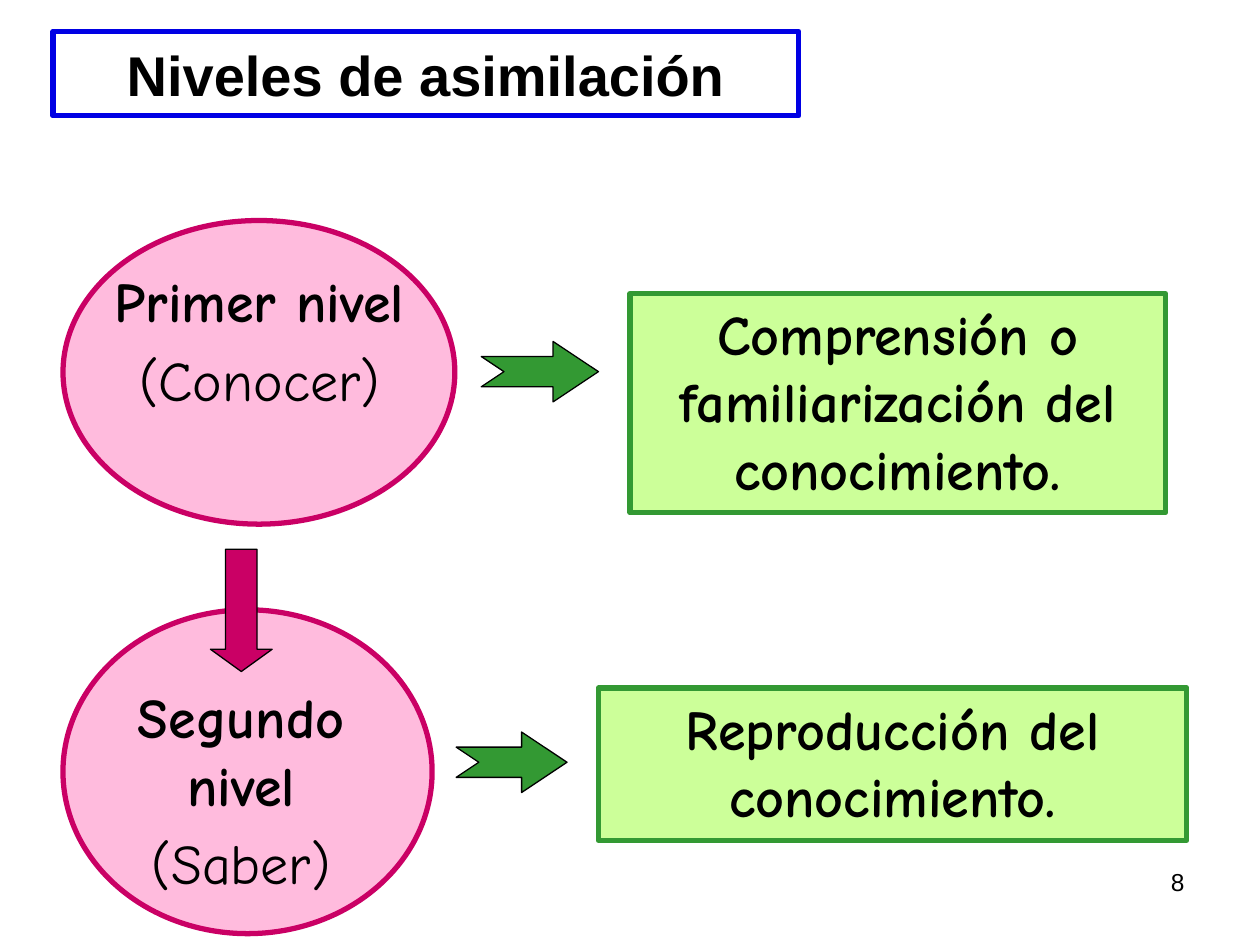
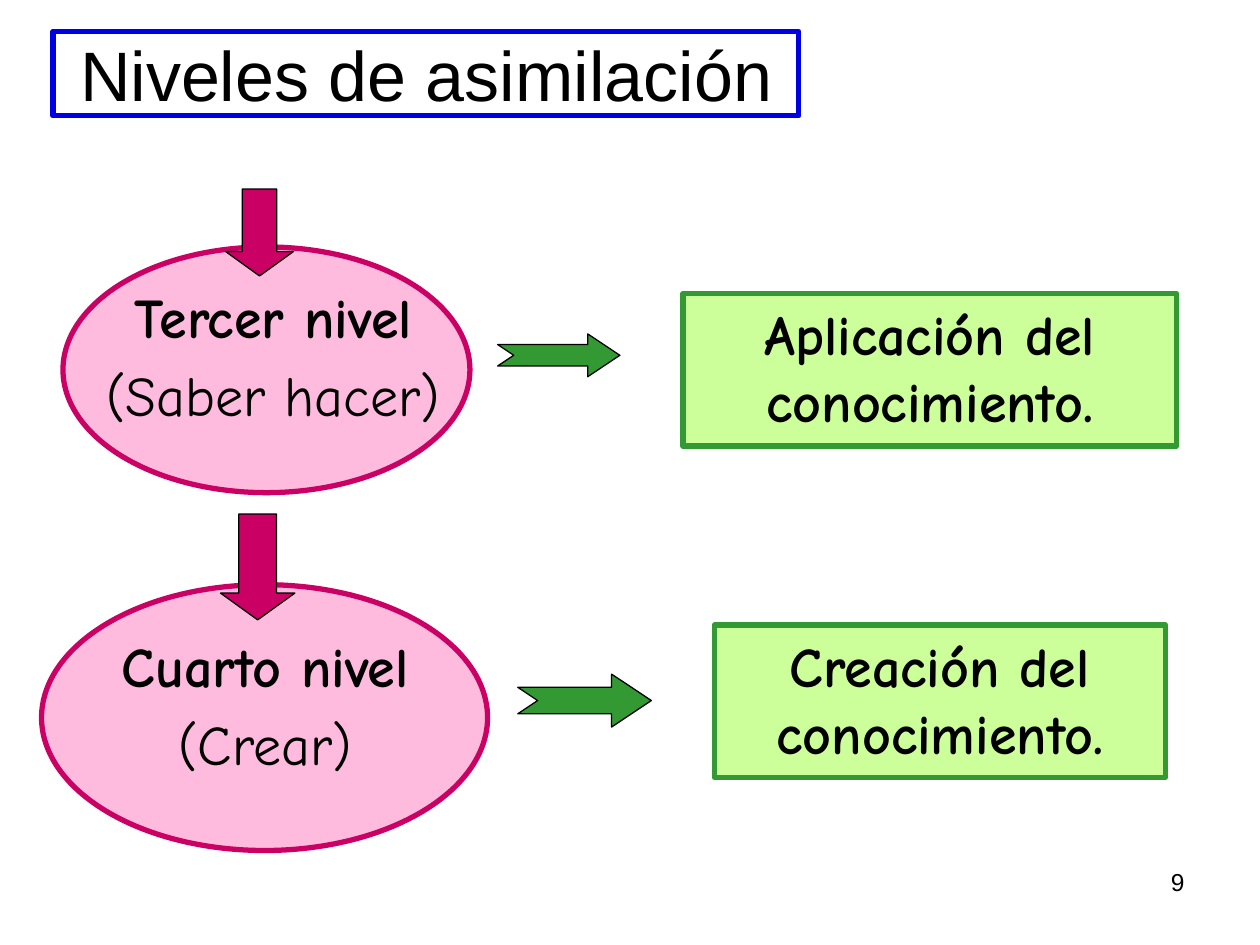
from pptx import Presentation
from pptx.dml.color import RGBColor
from pptx.enum import shapes, text
from pptx.util import Inches, Pt

COLORS = {
    "black": "000000", "white": "FFFFFF", "title_line": "0000E4",
    "pink": "FFBBDD", "magenta": "CA0065",
    "lime": "CCFF99", "green": "339933",
}
TITLE_FONT, BODY_FONT = "Arial", "Comic Neue"
TITLE_BOX = (0.42, 0.25, 5.92, 0.67)
NUMBER_BOX = (7.17, 6.83, 2.33, 0.52)
SHAPE = shapes.MSO_SHAPE
CENTER, RIGHT = text.PP_ALIGN.CENTER, text.PP_ALIGN.RIGHT

# Boxes are (left, top, width, height) in inches. Inside a level, the caption
# and arrow boxes are measured from the top left corner of its ellipse.
SLIDES = [
    {"number": 8, "title_size": 32, "title_bold": True,
     "levels": [
         {"ellipse": (0.5, 1.75, 3.11, 2.41), "name": "Primer nivel",
          "verb": "(Conocer)", "caption": (0.21, 0.32, 2.7, 1.8),
          "right": (3.32, 0.96, 0.93, 0.48), "down": None,
          "result": "Comprensión o familiarización del conocimiento.",
          "result_box": (5, 2.33, 4.25, 1.74)},
         {"ellipse": (0.5, 4.84, 2.93, 2.57), "name": "Segundo nivel",
          "verb": "(Saber)", "caption": (0, 0.53, 2.83, 1.8),
          "right": (3.12, 0.97, 0.88, 0.48), "down": (1.17, -0.48, 0.49, 0.97),
          "result": "Reproducción del conocimiento.",
          "result_box": (4.75, 5.46, 4.67, 1.21)},
     ]},
    {"number": 9, "title_size": 40, "title_bold": False,
     "levels": [
         {"ellipse": (0.5, 1.96, 3.23, 1.95), "name": "Tercer nivel",
          "verb": "(Saber hacer)", "caption": (0.11, 0.23, 3.12, 1.27),
          "right": (3.45, 0.69, 0.97, 0.34), "down": (1.29, -0.46, 0.54, 0.69),
          "result": "Aplicación del conocimiento.",
          "result_box": (5.42, 2.33, 3.92, 1.21)},
         {"ellipse": (0.33, 4.64, 3.54, 2.11), "name": "Cuarto nivel",
          "verb": "(Crear)", "caption": (0.24, 0.32, 3.07, 1.27),
          "right": (3.78, 0.71, 1.06, 0.42), "down": (1.42, -0.56, 0.59, 0.84),
          "result": "Creación del conocimiento.",
          "result_box": (5.67, 4.96, 3.58, 1.21)},
     ]},
]


def rgb(name):
    return RGBColor.from_string(COLORS[name])


def inside(outer, offset):
    """Turn a box measured from the corner of outer into a slide box."""
    return outer[0] + offset[0], outer[1] + offset[1], offset[2], offset[3]


def add_shape(slide, kind, box, fill, line, width=3, adjustments=()):
    sp = slide.shapes.add_shape(kind, *map(Inches, box))
    sp.shadow.inherit = False
    sp.fill.solid()
    sp.fill.fore_color.rgb = rgb(fill)
    sp.line.color.rgb = rgb(line)
    sp.line.width = Pt(width)
    for i, value in enumerate(adjustments):
        sp.adjustments[i] = value
    return sp


def write(sp, lines, font, size, align=CENTER, anchor=text.MSO_ANCHOR.TOP):
    """Fill a shape with (wording, bold) lines, one paragraph each."""
    tf = sp.text_frame
    tf.word_wrap = True
    tf.vertical_anchor = anchor
    for i, (wording, bold) in enumerate(lines):
        p = tf.add_paragraph() if i else tf.paragraphs[0]
        p.text = wording
        p.alignment = align
        p.space_before = Pt(0.2 * size if i else 0)
        p.font.name = font
        p.font.size = Pt(size)
        p.font.bold = bold
        p.font.color.rgb = rgb("black")


def add_title(slide, box, size, bold):
    sp = add_shape(slide, SHAPE.RECTANGLE, box, "white", "title_line")
    write(sp, [("Niveles de asimilación", bold)], TITLE_FONT, size,
          anchor=text.MSO_ANCHOR.MIDDLE)


def add_number(slide, box, number):
    sp = slide.shapes.add_textbox(*map(Inches, box))
    write(sp, [(str(number), False)], TITLE_FONT, 14, RIGHT)


def add_result(slide, box, wording):
    sp = add_shape(slide, SHAPE.RECTANGLE, box, "lime", "green")
    write(sp, [(wording, True)], BODY_FONT, 32)


def add_level(slide, box, level):
    add_shape(slide, SHAPE.OVAL, box, "pink", "magenta")
    caption = slide.shapes.add_textbox(
        *map(Inches, inside(box, level["caption"])))
    write(caption, [(level["name"], True), (level["verb"], False)],
          BODY_FONT, 32)
    # Arrow from the previous level, then arrow to the result
    if level["down"]:
        add_shape(slide, SHAPE.DOWN_ARROW, inside(box, level["down"]),
                  "magenta", "black", 0.75, (0.51, 0.36))
    add_shape(slide, SHAPE.NOTCHED_RIGHT_ARROW, inside(box, level["right"]),
              "green", "black", 0.75, (0.5, 0.75))


def add_levels_slide(prs, content):
    slide = prs.slides.add_slide(prs.slide_layouts[6])
    add_title(slide, TITLE_BOX, content["title_size"], content["title_bold"])
    for level in content["levels"]:
        add_result(slide, level["result_box"], level["result"])
        add_level(slide, level["ellipse"], level)
    add_number(slide, NUMBER_BOX, content["number"])


def main():
    prs = Presentation()
    prs.slide_width, prs.slide_height = Inches(10), Inches(7.5)
    for content in SLIDES:
        add_levels_slide(prs, content)
    prs.save("out.pptx")


if __name__ == "__main__":
    main()
